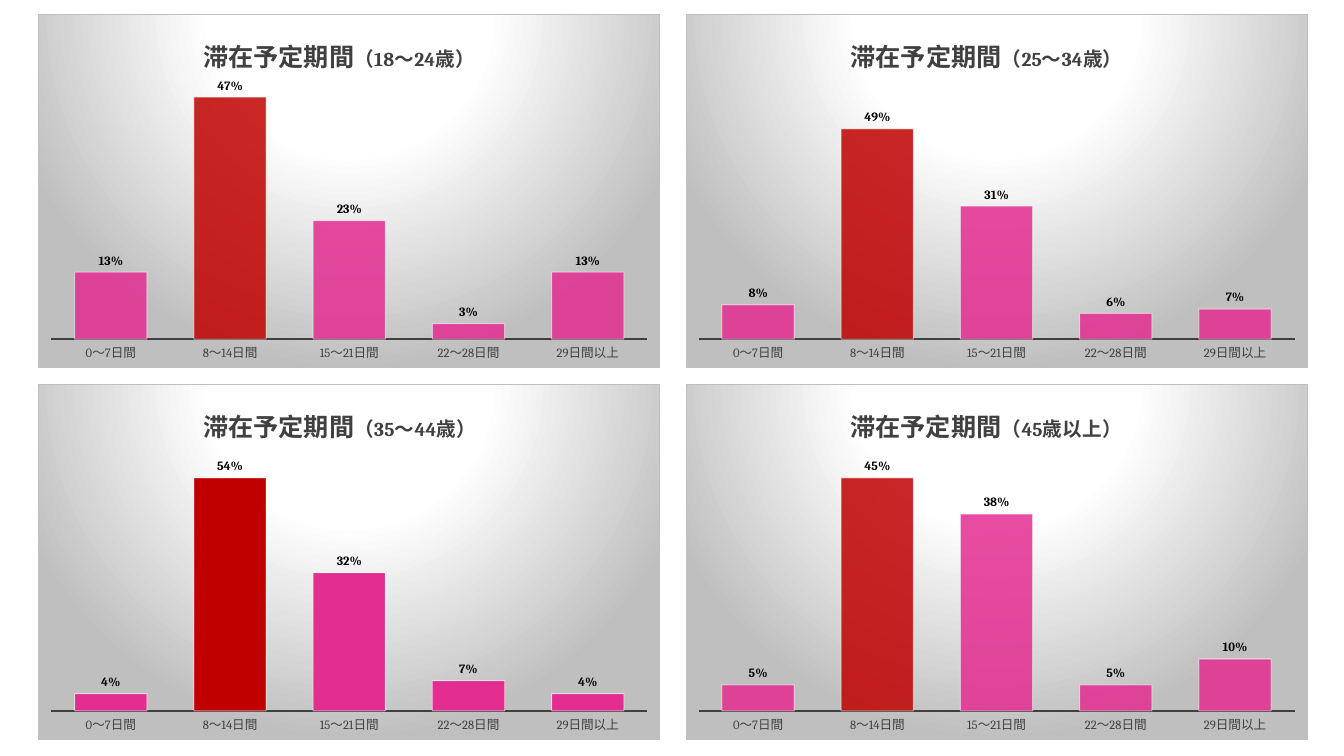
from dataclasses import dataclass

from pptx import Presentation
from pptx.chart.data import CategoryChartData
from pptx.dml.color import RGBColor
from pptx.enum.chart import XL_CHART_TYPE as CT, XL_LABEL_POSITION as LP, XL_TICK_MARK as TM
from pptx.oxml import parse_xml
from pptx.oxml.ns import nsdecls, qn
from pptx.util import Inches, Pt


@dataclass(frozen=True)
class Theme:
    font: str = "Cambria"
    bar: str = "E32D91"
    peak: str = "C00000"
    ink: str = "404040"
    label: str = "000000"
    light: str = "FFFFFF"
    edge: str = "BFBFBF"
    title_size: int = 18
    age_size: int = 14
    base_size: int = 10
    label_size: int = 9


TOPIC = "滞在予定期間"
STAYS = ["0～7日間", "8～14日間", "15～21日間", "22～28日間", "29日間以上"]
PEAK = 1
AGE_GROUPS = [
    ("（18～24歳）", (0.13, 0.47, 0.23, 0.03, 0.13), 0.5, 85),
    ("（25～34歳）", (0.08, 0.49, 0.31, 0.06, 0.07), 0.6, 85),
    ("（35～44歳）", (0.04, 0.54, 0.32, 0.07, 0.04), 0.6, 100),
    ("（45歳以上）", (0.05, 0.45, 0.38, 0.05, 0.1), 0.5, 85),
]
LEFTS = (0.38, 6.8)
ROWS = ((0.14, 3.51), (3.81, 3.53))
CHART_WIDTH = 6.17


def set_all(obj, values):
    for name, value in values.items():
        setattr(obj, name, value)


def set_alpha(color_format, percent):
    color = color_format._xFill.find(qn("a:srgbClr"))
    color.append(parse_xml(f'<a:alpha {nsdecls("a")} val="{percent * 1000}"/>'))


def layout_xml(inner=False, **edges):
    target = '<c:layoutTarget val="inner"/>' if inner else ""
    modes = "".join(f'<c:{k}Mode val="edge"/>' for k in edges if k in "xy")
    sizes = "".join(f'<c:{k} val="{v}"/>' for k, v in edges.items())
    return parse_xml(f'<c:layout {nsdecls("c")}><c:manualLayout>{target}{modes}{sizes}'
                     "</c:manualLayout></c:layout>")


class Deck:
    def __init__(self, theme):
        self.theme = theme
        self.prs = Presentation()
        set_all(self.prs, {"slide_width": Inches(13.33), "slide_height": Inches(7.5)})
        self.s = self.prs.slides.add_slide(self.prs.slide_layouts[6])

    def style_font(self, font, size, color, bold=False):
        set_all(font, {"name": self.theme.font, "size": Pt(size), "bold": bold})
        font.color.rgb = RGBColor.from_string(color)

    def chart(self, box, age, values, top, opacity):
        t = self.theme
        data = CategoryChartData(number_format="0%")
        data.categories = STAYS
        data.add_series("Series 1", values)
        chart = self.s.shapes.add_chart(CT.COLUMN_CLUSTERED, *map(Inches, box), data).chart
        chart.has_legend = False
        self.style_font(chart.font, t.base_size, t.label)
        self.title(chart, age)
        self.axes(chart, top)
        self.bars(chart.plots[0], opacity)
        self.background(chart)

    def title(self, chart, age):
        t = self.theme
        p = chart.chart_title.text_frame.paragraphs[0]
        for text, size in ((TOPIC, t.title_size), (age, t.age_size)):
            r = p.add_run()
            r.text = text
            self.style_font(r.font, size, t.ink, True)
        title = chart.chart_title._element
        for old in title.findall(qn("c:layout")):
            title.remove(old)
        title.find(qn("c:tx")).addnext(layout_xml(x=0.26, y=0.05))

    def axes(self, chart, top):
        t = self.theme
        set_all(chart.value_axis, {"minimum_scale": 0, "maximum_scale": top,
                                   "has_major_gridlines": False, "visible": False})
        axis = chart.category_axis
        set_all(axis, {"major_tick_mark": TM.NONE, "minor_tick_mark": TM.NONE,
                       "has_major_gridlines": False})
        self.style_font(axis.tick_labels.font, t.label_size, t.ink)
        axis.format.line.width = Pt(1.5)
        axis.format.line.color.rgb = RGBColor.from_string(t.ink)
        plot_area = chart._chartSpace.chart.plotArea
        for old in plot_area.findall(qn("c:layout")):
            plot_area.remove(old)
        plot_area.insert(0, layout_xml(True, x=0.02, y=0.19, w=0.96, h=0.73))

    def bars(self, plot, opacity):
        t = self.theme
        set_all(plot, {"gap_width": 65, "vary_by_categories": False, "has_data_labels": True})
        labels = plot.data_labels
        set_all(labels, {"show_value": True, "position": LP.OUTSIDE_END,
                         "number_format": "0%", "number_format_is_linked": False})
        self.style_font(labels.font, t.label_size, t.label, True)
        series = plot.series[0]
        series.invert_if_negative = False
        self.bar_format(series.format, t.bar, opacity)
        self.bar_format(series.points[PEAK].format, t.peak)

    def bar_format(self, fmt, color, opacity=100):
        fmt.fill.solid()
        fmt.fill.fore_color.rgb = RGBColor.from_string(color)
        if opacity < 100:
            set_alpha(fmt.fill.fore_color, opacity)
        fmt.line.width = Pt(0.75)
        fmt.line.color.rgb = RGBColor.from_string(self.theme.light)
        set_alpha(fmt.line.color, 50)

    def background(self, chart):
        t = self.theme
        stops = "".join(f'<a:gs pos="{pos * 1000}"><a:srgbClr val="{color}"/></a:gs>'
                        for pos, color in ((0, t.light), (39, t.light), (100, t.edge)))
        chart._chartSpace.chart.addnext(parse_xml(
            f'<c:spPr {nsdecls("c", "a")}><a:gradFill><a:gsLst>{stops}</a:gsLst>'
            '<a:path path="circle"><a:fillToRect l="50000" t="-80000" r="50000" b="180000"/>'
            f'</a:path></a:gradFill><a:ln w="{Pt(0.75)}"><a:solidFill>'
            f'<a:srgbClr val="{t.edge}"/></a:solidFill></a:ln></c:spPr>'))


def main():
    deck = Deck(Theme())
    for i, group in enumerate(AGE_GROUPS):
        row, col = divmod(i, 2)
        top, height = ROWS[row]
        deck.chart((LEFTS[col], top, CHART_WIDTH, height), *group)
    deck.prs.save("out.pptx")


if __name__ == "__main__":
    main()
